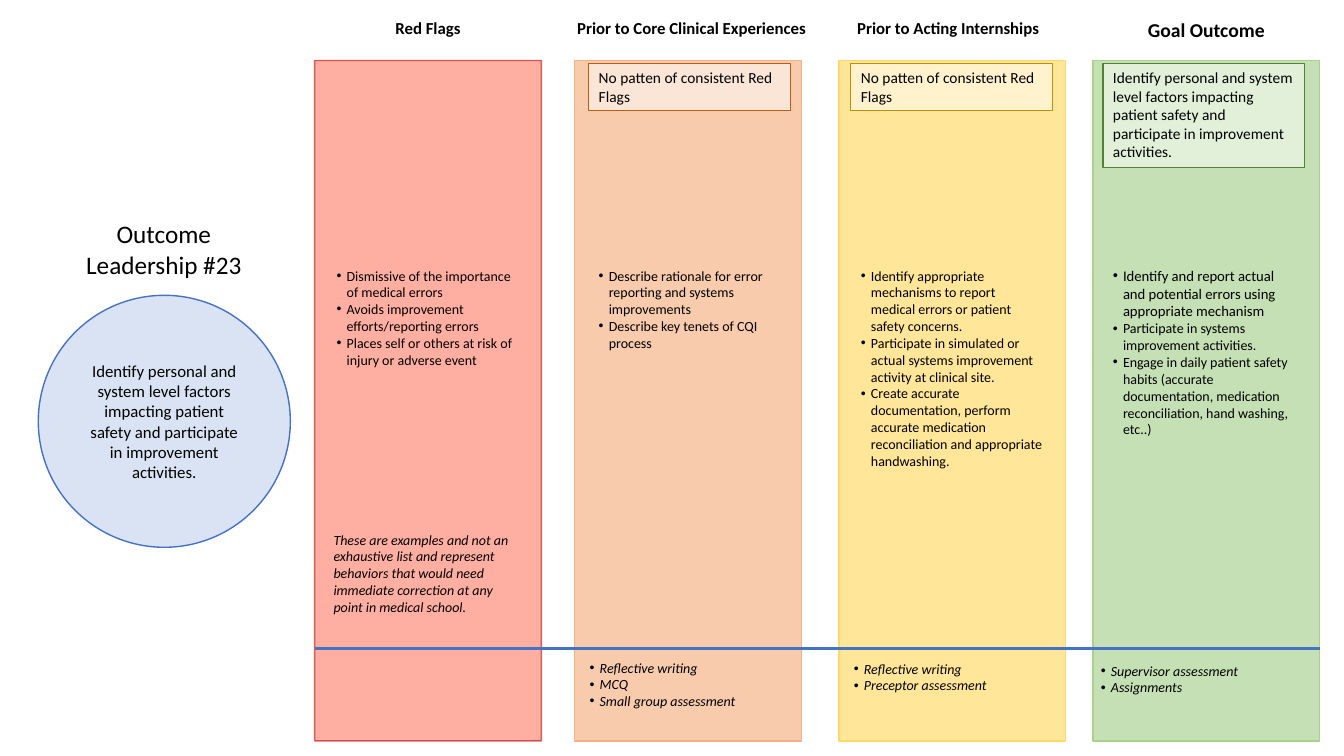
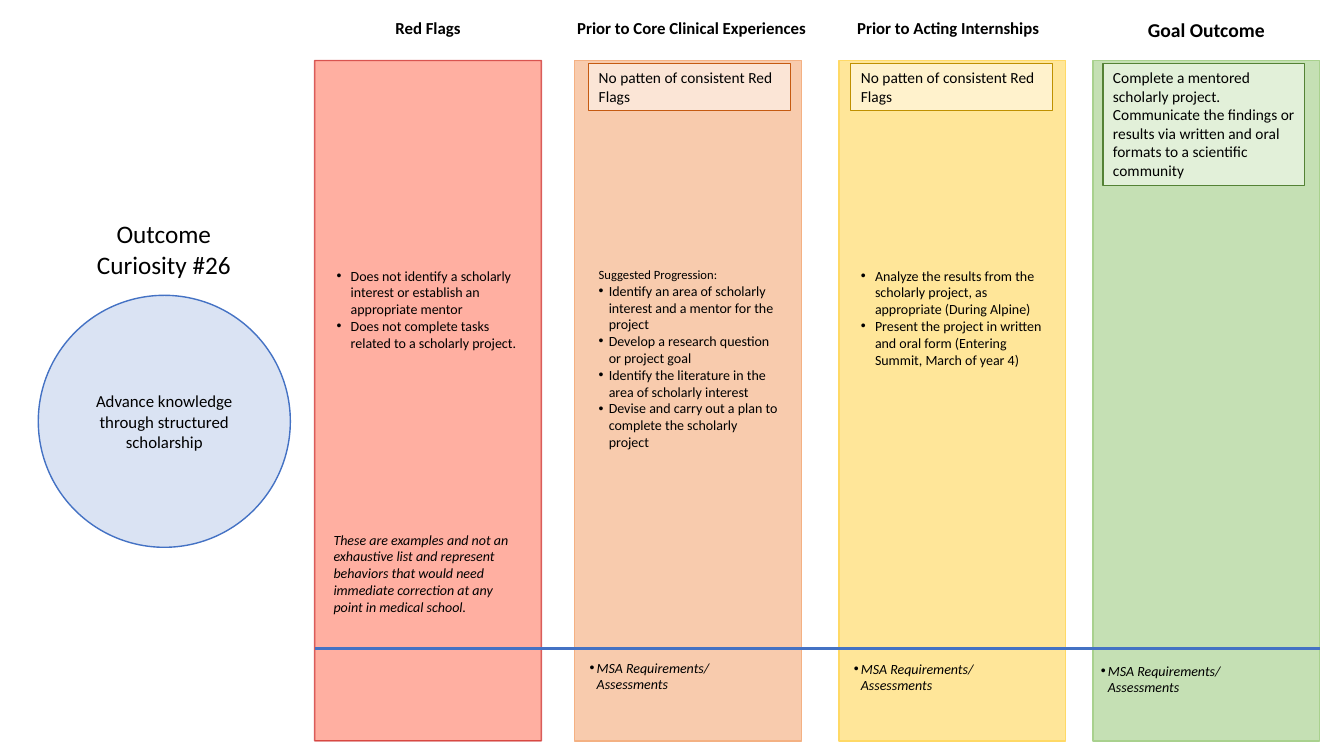
import pptx
import pptx.util
import pptx.dml.color
import pptx.enum.shapes
import pptx.enum.text
import pptx.oxml
import pptx.oxml.ns

PX = 9144  # EMU in one px, 100 px to the inch
KIND = pptx.enum.shapes.MSO_SHAPE
ANCHOR = pptx.enum.text.MSO_ANCHOR
ALIGN = pptx.enum.text.PP_ALIGN
FIT = pptx.enum.text.MSO_AUTO_SIZE


def px(*sizes):
    return [pptx.util.Emu(size * PX) for size in sizes]


def color(code):
    return pptx.dml.color.RGBColor.from_string(code)


def child(parent, tag, **attrs):
    node = pptx.oxml.parse_xml(f"<{tag} {pptx.oxml.ns.nsdecls('a')}/>")
    for key, value in attrs.items():
        node.set(key, str(value))
    parent.append(node)


class Deck:
    font, ink, blue = "Calibri", "000000", "4472C4"

    def __init__(self, wide, high):
        self.prs = pptx.Presentation()
        self.prs.slide_width, self.prs.slide_height = px(wide, high)
        self.slide = None

    def start(self):
        self.slide = self.prs.slides.add_slide(self.prs.slide_layouts[5])

    def label(self, shape, lines, size, dent=0, align=ALIGN.LEFT,
              anchor=ANCHOR.TOP, fit=FIT.SHAPE_TO_FIT_TEXT, **style):
        """A line is a string, or a tuple of string, size and indent."""
        frame = shape.text_frame
        frame.word_wrap, frame.auto_size = True, fit
        frame.vertical_anchor = anchor
        frame.margin_left = frame.margin_right = px(10)[0]
        frame.margin_top = frame.margin_bottom = px(5)[0]
        for i, line in enumerate(lines):
            words, points, inset = (
                (line, size, dent) if isinstance(line, str) else line)
            para = frame.add_paragraph() if i else frame.paragraphs[0]
            para.alignment = align
            if inset:
                self.bullet(para, inset)
            run = para.add_run()
            run.text = words
            run.font.name, run.font.size = self.font, pptx.util.Pt(points)
            run.font.color.rgb = color(self.ink)
            run.font.bold = style.get("bold", False)
            run.font.italic = style.get("italic", False)

    def bullet(self, para, inset):
        props = para._p.get_or_add_pPr()
        props.set("marL", str(inset * PX))
        props.set("indent", str(-inset * PX))
        child(props, "a:buFont", typeface="Arial")
        child(props, "a:buChar", char="•")

    def title(self, box, lines):
        shape = self.slide.shapes.title
        shape.left, shape.top, shape.width, shape.height = px(*box)
        self.label(shape, lines, 18, align=ALIGN.CENTER)

    def text(self, box, lines, size, **style):
        shape = self.slide.shapes.add_textbox(*px(*box))
        self.label(shape, lines, size, **style)

    def shape(self, kind, box, fill, edge, width=1, alphas=()):
        shape = self.slide.shapes.add_shape(kind, *px(*box))
        shape.shadow.inherit = False
        shape.fill.solid()
        shape.fill.fore_color.rgb = color(fill)
        shape.line.color.rgb = color(edge)
        shape.line.width = pptx.util.Pt(width)
        # Fill comes before line in the tree
        tones = shape._element.spPr.findall(
            ".//" + pptx.oxml.ns.qn("a:srgbClr"))
        for tone, alpha in zip(tones, alphas):
            child(tone, "a:alpha", val=alpha * 1000)
        return shape

    def rule(self, left, right, y):
        line = self.slide.shapes.add_connector(
            pptx.enum.shapes.MSO_CONNECTOR.STRAIGHT, *px(left, y, right, y))
        line.line.color.rgb = color(self.blue)
        line.line.width = pptx.util.Pt(2.25)
        child(line._element.spPr, "a:effectLst")


# Shared columns: band left, fill, edge, alphas; heading left, width, size
BANDS = [
    (312, "FF2600", "C00000", (37, 59)),
    (570, "F8CBAD", "F4B183", ()),
    (832, "FFE699", "FFD966", ()),
    (1084, "C5E0B4", "A9D18E", ()),
]
HEADS = [
    ("Red Flags", 312, 225, 12),
    ("Prior to Core Clinical Experiences", 560, 252, 12),
    ("Prior to Acting Internships", 828, 225, 12),
    ("Goal Outcome", 1084, 225, 14),
]
BODIES = [324, 584, 844, 1094]
FEET = [(575, 649, 194), (837, 650, 212), (1082, 652, 211)]
CARDS = [("FBE5D6", "C55A11"), ("FFF2CC", "BF9000"), ("E2F0D9", "548235")]
CLEAR = "No patten of consistent Red Flags"
NOTE = ("These are examples and not an exhaustive list and represent "
        "behaviors that would need immediate correction at any point in "
        "medical school.")
SAFETY = ("Identify personal and system level factors impacting patient "
          "safety and participate in improvement activities.")
MSA = ["MSA Requirements/ Assessments"]

# What each slide says
PAGES = [
    dict(
        title=["Outcome", "Leadership #23"], aim=SAFETY,
        goal=SAFETY, high=103, dents=(10, 10, 10, 10), inset=10,
        bodies=[
            ["Dismissive of the importance of medical errors",
             "Avoids improvement efforts/reporting errors",
             "Places self or others at risk of injury or adverse event"],
            ["Describe rationale for error reporting and systems improvements",
             "Describe key tenets of CQI process"],
            ["Identify appropriate mechanisms to report medical errors or "
             "patient safety concerns.",
             "Participate in simulated or actual systems improvement "
             "activity at clinical site.",
             "Create accurate documentation, perform accurate medication "
             "reconciliation and appropriate handwashing."],
            [("Identify and report actual and potential errors using "
              "appropriate mechanism", 10.5, 10),
             "Participate in systems improvement activities.",
             "Engage in daily patient safety habits (accurate documentation, "
             "medication reconciliation, hand washing, etc..)"],
        ],
        feet=[
            ["Reflective writing", "MCQ", "Small group assessment"],
            ["Reflective writing", "Preceptor assessment"],
            ["Supervisor assessment", "Assignments"],
        ],
    ),
    dict(
        title=["Outcome", "Curiosity #26"],
        aim="Advance knowledge through structured scholarship",
        goal="Complete a mentored scholarly project. Communicate the findings "
             "or results via written and oral formats to a scientific "
             "community",
        high=121, dents=(14, 10, 14), inset=7,
        bodies=[
            ["Does not identify a scholarly interest or establish an "
             "appropriate mentor",
             "Does not complete tasks related to a scholarly project."],
            [("Suggested Progression:", 9, 0),
             "Identify an area of scholarly interest and a mentor for the "
             "project",
             "Develop a research question or project goal",
             "Identify the literature in the area of scholarly interest",
             "Devise and carry out a plan to complete the scholarly project"],
            ["Analyze the results from the scholarly project, as appropriate "
             "(During Alpine)",
             "Present the project in written and oral form (Entering Summit, "
             "March of year 4)"],
        ],
        feet=[MSA] * 3,
    ),
]


def draw(deck, page):
    deck.start()
    # Outcome and its circle
    deck.title((50, 212, 225, 71), page["title"])
    disc = deck.shape(KIND.OVAL, (38, 293, 250, 250), "DAE3F3", deck.blue)
    deck.label(disc, [page["aim"]], 12, align=ALIGN.CENTER,
               anchor=ANCHOR.MIDDLE, fit=FIT.NONE)
    # Bands and headings
    for left, fill, edge, alphas in BANDS:
        deck.shape(KIND.RECTANGLE, (left, 60, 225, 675), fill, edge,
                   alphas=alphas)
    for words, left, wide, size in HEADS:
        deck.text((left, 13, wide, 30), [words], size,
                  align=ALIGN.CENTER, bold=True)
    deck.rule(312, 1309, 643)
    # Behaviors
    for left, lines, dent in zip(BODIES, page["bodies"], page["dents"]):
        deck.text((left, 260, 200, 111), lines, 10, dent=dent)
    deck.text((321, 522, 200, 111), [NOTE], 10, italic=True)
    # Cards at the top of the last three bands
    cards = [(CLEAR, 47), (CLEAR, 47), (page["goal"], page["high"])]
    for left, (fill, edge), (words, high) in zip(BODIES[1:], CARDS, cards):
        card = deck.shape(KIND.RECTANGLE, (left, 63, 200, high),
                          fill, edge, 0.75)
        deck.label(card, [words], 11)
    # Assessments below the rule
    for (left, top, wide), lines in zip(FEET, page["feet"]):
        deck.text((left, top, wide, 44), lines, 10, dent=page["inset"],
                  italic=True)


def main():
    deck = Deck(1333, 750)
    for page in PAGES:
        draw(deck, page)
    deck.prs.save("out.pptx")


if __name__ == "__main__":
    main()
